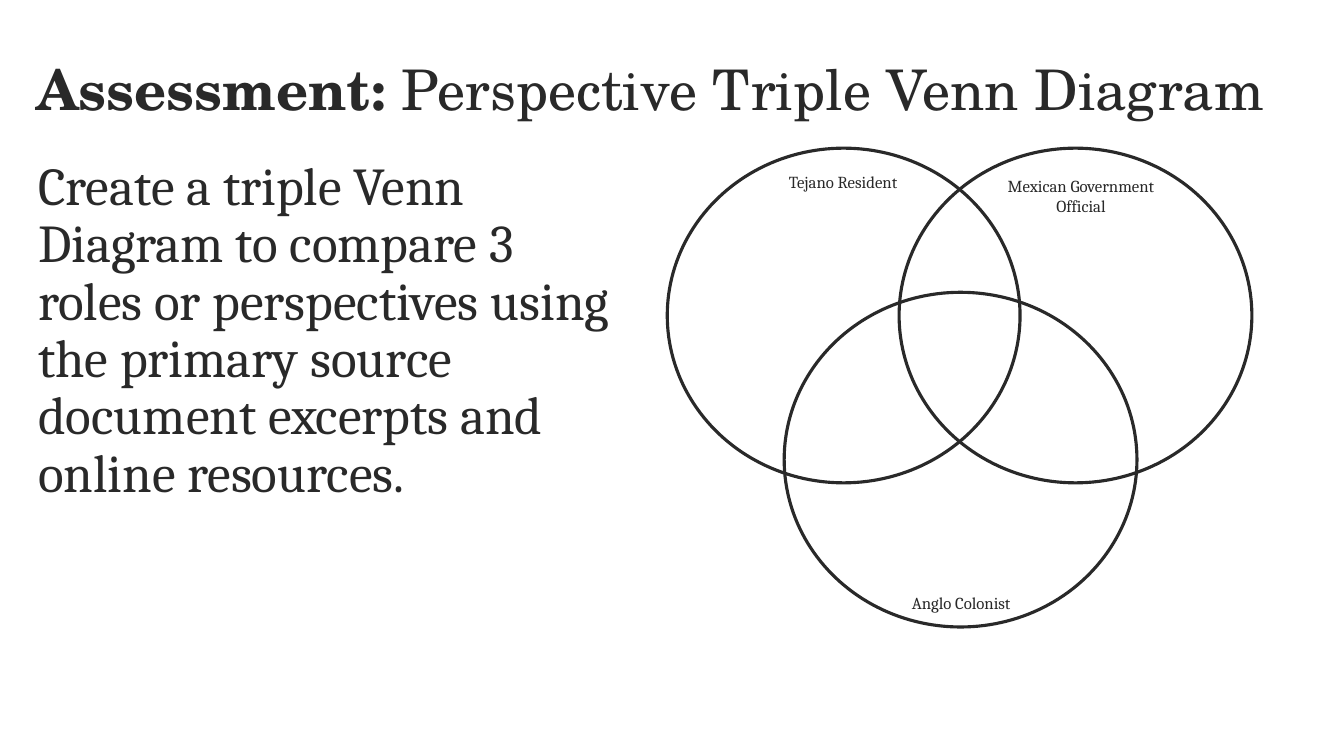
import pptx
import pptx.dml.color
import pptx.enum.shapes
import pptx.enum.text
import pptx.util

Pt = pptx.util.Pt
ALIGN = pptx.enum.text.PP_ALIGN
ANCHOR = pptx.enum.text.MSO_ANCHOR

# Content: text runs are (wording, bold)
TITLE = [("Assessment:", True), (" Perspective Triple Venn Diagram", False)]
TASK = [("Create a triple Venn Diagram to compare 3 roles or perspectives using "
         "the primary source document excerpts and online resources.", False)]
CIRCLES = [(476.64, 105.84), (642.24, 105.84), (560.16, 208.8)]
LABELS = [
    ("Tejano Resident", (533.5, 118.8, 137.5, 21.6)),
    ("Mexican Government Official", (699.1, 121.7, 146.2, 36)),
    ("Anglo Colonist", (617.8, 419.8, 137.5, 21.6)),
]

# Style
INK = pptx.dml.color.RGBColor(0x29, 0x29, 0x29)
TITLE_FONT, BODY_FONT = "TeX Gyre Schola", "Cambria"
CIRCLE_SIZE = (252, 239.04)


def points(*lengths):
    return [Pt(length) for length in lengths]


def add_text(shapes, area, runs, font, size, align=ALIGN.LEFT,
             anchor=ANCHOR.TOP, spacing=1.0):
    box = shapes.add_textbox(*points(*area))
    frame = box.text_frame
    frame.word_wrap = True
    frame.vertical_anchor = anchor
    para = frame.paragraphs[0]
    para.alignment = align
    para.line_spacing = spacing
    for wording, bold in runs:
        span = para.add_run()
        span.text = wording
        span.font.name = font
        span.font.size = Pt(size)
        span.font.bold = bold
        span.font.color.rgb = INK


def add_circle(shapes, corner):
    circle = shapes.add_shape(pptx.enum.shapes.MSO_SHAPE.OVAL,
                              *points(*corner, *CIRCLE_SIZE))
    circle.shadow.inherit = False
    circle.fill.background()
    circle.line.color.rgb = INK
    circle.line.width = Pt(2.25)


deck = pptx.Presentation()
deck.slide_width, deck.slide_height = points(960, 540)
page = deck.slides.add_slide(deck.slide_layouts[6])

# Title and task
add_text(page.shapes, (18.72, 13.68, 920.88, 104.4), TITLE, TITLE_FONT, 40,
         anchor=ANCHOR.MIDDLE, spacing=0.9)
add_text(page.shapes, (20.16, 110.16, 434.88, 308.16), TASK, BODY_FONT, 38,
         spacing=0.9)

# Venn diagram
venn = page.shapes.add_group_shape()
for corner in CIRCLES:
    add_circle(venn.shapes, corner)
for wording, area in LABELS:
    add_text(venn.shapes, area, [(wording, False)], BODY_FONT, 12, ALIGN.CENTER)

deck.save("out.pptx")
